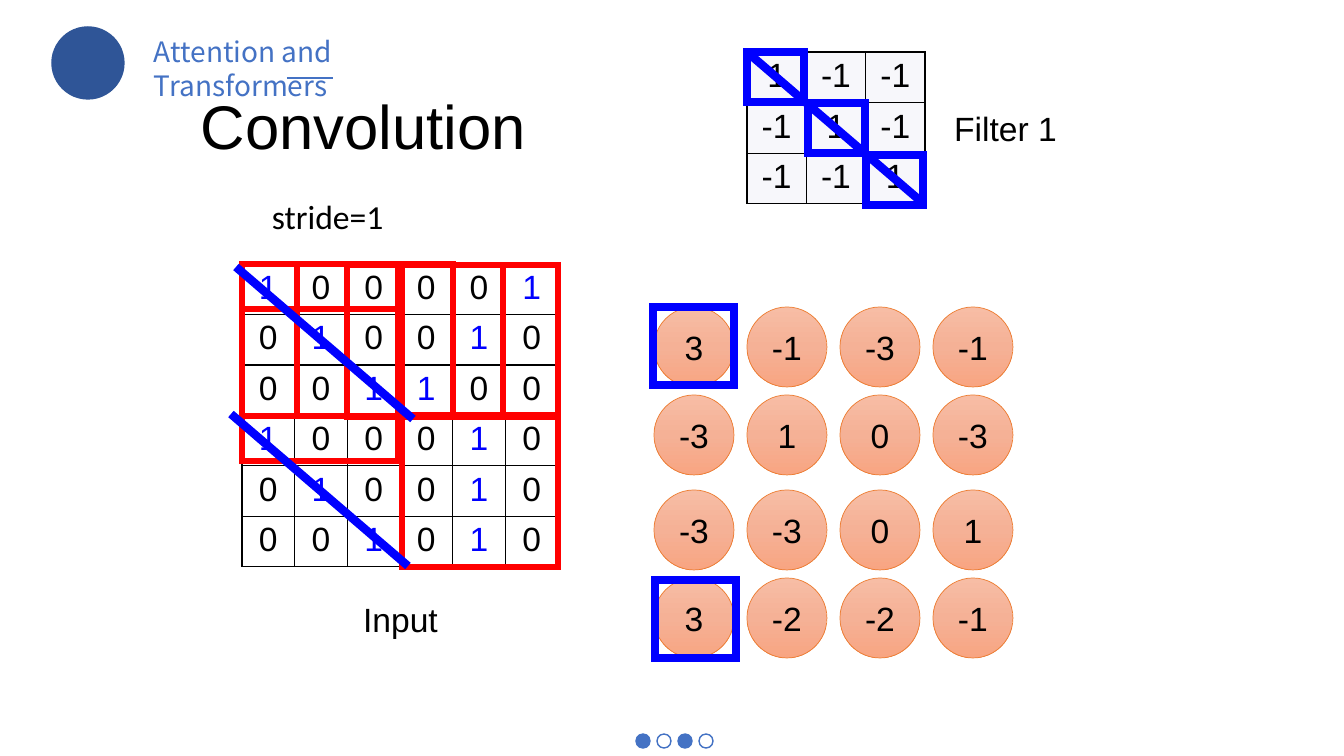
from dataclasses import dataclass
from typing import Any, Optional

import pptx
import pptx.dml.color
import pptx.enum.shapes
import pptx.enum.text
import pptx.oxml
import pptx.oxml.ns
import pptx.util

EMU_PER_PX = 914400 / 100.8
SHAPE = pptx.enum.shapes.MSO_SHAPE
ALIGN = pptx.enum.text.PP_ALIGN
ANCHOR = pptx.enum.text.MSO_ANCHOR


@dataclass(frozen=True)
class Theme:
    black: str = "000000"
    blue: str = "0000FF"
    red: str = "FF0000"
    accent: str = "4472C4"
    emblem: str = "2F5597"
    orange: str = "ED7D31"
    filter_fill: str = "F7F7FB"
    peach: tuple[str, ...] = ("F7BDA5", "F5B196", "F8A582")
    title: int = 44
    body: int = 24
    header: int = 20
    sans: str = "Arial"
    header_font: str = "Noto Sans CJK SC"
    label_font: str = "Calibri"


T = Theme()


@dataclass(frozen=True)
class Box:
    x: int
    y: int
    w: int
    h: int


@dataclass(frozen=True)
class Label:
    text: str
    box: Box
    size: int = T.body
    font: str = T.sans
    color: str = T.black
    align: Any = ALIGN.LEFT
    spacing: float = 1.0
    wrap: bool = True


@dataclass(frozen=True)
class Grid:
    box: Box
    rows: list[list[int]]
    one_color: str
    fill: Optional[str] = None


@dataclass(frozen=True)
class Stroke:
    x1: int
    y1: int
    x2: int
    y2: int
    color: str = T.blue
    width: float = 6


LABELS = [
    Label("Attention and Transformers", Box(144, 30, 222, 80), T.header, T.header_font, T.accent),
    Label("Convolution", Box(191, 91, 397, 86), T.title, spacing=0.9),
    Label("Input", Box(271, 594, 259, 50), align=ALIGN.CENTER),
    Label("Filter 1", Box(926, 103, 159, 51), align=ALIGN.CENTER),
    Label("stride=1", Box(262, 191, 133, 51), font=T.label_font, wrap=False),
]
INPUT = Grid(Box(242, 264, 316, 303), [
    [1, 0, 0, 0, 0, 1],
    [0, 1, 0, 0, 1, 0],
    [0, 0, 1, 1, 0, 0],
    [1, 0, 0, 0, 1, 0],
    [0, 1, 0, 0, 1, 0],
    [0, 0, 1, 0, 1, 0],
], T.blue)
FILTER = Grid(Box(747, 52, 178, 152), [[1, -1, -1], [-1, 1, -1], [-1, -1, 1]], T.black, T.filter_fill)
FEATURE_MAP = {307: [3, -1, -3, -1], 395: [-3, 1, 0, -3], 490: [-3, -3, 0, 1], 578: [3, -2, -2, -1]}
EMBLEM = Box(52, 27, 72, 72)
WINDOWS = [(242, 264), (297, 264), (347, 265), (402, 265), (242, 309), (402, 415)]
MARKS = [Box(x, y, 57, 50) for x, y in [(747, 52), (808, 103), (866, 155)]]
MARKS += [Box(x, y, 81, 78) for x, y in [(653, 307), (655, 580)]]
DIAGONALS = [(747, 52), (236, 267), (231, 414)]


def emu(px: float) -> int:
    return round(px * EMU_PER_PX)


def place(box: Box) -> list[int]:
    return [emu(v) for v in (box.x, box.y, box.w, box.h)]


def rgb(color: str) -> pptx.dml.color.RGBColor:
    return pptx.dml.color.RGBColor.from_string(color)


def xml(tag: str, attrs: str = "", inner: str = "") -> Any:
    return pptx.oxml.parse_xml(f"<a:{tag} {pptx.oxml.ns.nsdecls('a')} {attrs}>{inner}</a:{tag}>")


def gradient(colors: tuple[str, ...]) -> Any:
    step = 100000 // (len(colors) - 1)
    stops = "".join(f'<a:gs pos="{i * step}"><a:srgbClr val="{c}"/></a:gs>' for i, c in enumerate(colors))
    inner = f'<a:gsLst>{stops}</a:gsLst><a:lin ang="5400000" scaled="0"/>'
    return xml("gradFill", 'rotWithShape="1"', inner)


def write(tf: Any, text: str, size: int, font: str, color: str, align: Any) -> Any:
    p = tf.paragraphs[0]
    p.alignment = align
    r = p.add_run()
    r.text = text
    r.font.size = pptx.util.Pt(size)
    r.font.name = font
    r.font.color.rgb = rgb(color)
    return p


def add_outline(s: Any, kind: Any, box: Box, color: str, width: float = 1, fill: Any = None) -> Any:
    sp = s.shapes.add_shape(kind, *place(box))
    sp.shadow.inherit = False
    if fill is None:
        sp.fill.background()
    elif isinstance(fill, str):
        sp.fill.solid()
        sp.fill.fore_color.rgb = rgb(fill)
    else:
        sp.element.spPr.insert(2, fill)
    sp.line.color.rgb = rgb(color)
    sp.line.width = pptx.util.Pt(width)
    sp.element.spPr.find(pptx.oxml.ns.qn("a:ln")).append(xml("miter", 'lim="800000"'))
    return sp


def add_value(s: Any, box: Box, value: int) -> None:
    sp = add_outline(s, SHAPE.OVAL, box, T.orange, 0.5, gradient(T.peach))
    sp.text_frame.vertical_anchor = ANCHOR.MIDDLE
    write(sp.text_frame, str(value), T.body, T.sans, T.black, ALIGN.CENTER)


def add_label(s: Any, label: Label) -> None:
    tf = s.shapes.add_textbox(*place(label.box)).text_frame
    tf.word_wrap = label.wrap
    p = write(tf, label.text, label.size, label.font, label.color, label.align)
    p.line_spacing = label.spacing


def add_grid(s: Any, grid: Grid) -> None:
    n = len(grid.rows)
    table = s.shapes.add_table(n, n, *place(grid.box)).table
    table.first_row = table.horz_banding = False
    border = f'<a:solidFill><a:srgbClr val="{T.black}"/></a:solidFill>'
    for i, values in enumerate(grid.rows):
        table.columns[i].width = emu(grid.box.w / n)
        table.rows[i].height = emu(grid.box.h / n)
        for j, value in enumerate(values):
            cell = table.cell(i, j)
            if grid.fill:
                cell.fill.solid()
                cell.fill.fore_color.rgb = rgb(grid.fill)
            else:
                cell.fill.background()
            color = grid.one_color if value == 1 else T.black
            write(cell.text_frame, str(value), T.body, T.sans, color, ALIGN.CENTER)
            for k, side in enumerate("LRTB"):
                cell._tc.get_or_add_tcPr().insert(k, xml(f"ln{side}", 'w="12700"', border))


def add_stroke(s: Any, stroke: Stroke) -> None:
    ends = [emu(v) for v in (stroke.x1, stroke.y1, stroke.x2, stroke.y2)]
    sp = s.shapes.add_connector(pptx.enum.shapes.MSO_CONNECTOR.STRAIGHT, *ends)
    sp.line.color.rgb = rgb(stroke.color)
    sp.line.width = pptx.util.Pt(stroke.width)
    sp.element.spPr.append(xml("effectLst"))


def main() -> None:
    prs = pptx.Presentation()
    prs.slide_width, prs.slide_height = emu(1344), emu(756)
    s = prs.slides.add_slide(prs.slide_layouts[6])
    for i in range(4):
        add_outline(s, SHAPE.OVAL, Box(636 + 21 * i, 734, 14, 14), T.accent, 1, None if i % 2 else T.accent)
    add_stroke(s, Stroke(287, 78, 333, 78, T.accent, 1.5))
    add_outline(s, SHAPE.OVAL, EMBLEM, T.emblem, fill=T.emblem)
    for label in LABELS:
        add_label(s, label)
    for grid in (INPUT, FILTER):
        add_grid(s, grid)
    for y, values in FEATURE_MAP.items():
        for i, value in enumerate(values):
            add_value(s, Box(654 + 93 * i, y, 80, 80), value)
    for x, y in WINDOWS:
        add_outline(s, SHAPE.RECTANGLE, Box(x, y, 156, 152), T.red, 4.5)
    for box in MARKS:
        add_outline(s, SHAPE.RECTANGLE, box, T.blue, 6)
    for x, y in DIAGONALS:
        add_stroke(s, Stroke(x, y, x + 177, y + 152))
    prs.save("out.pptx")


if __name__ == "__main__":
    main()
